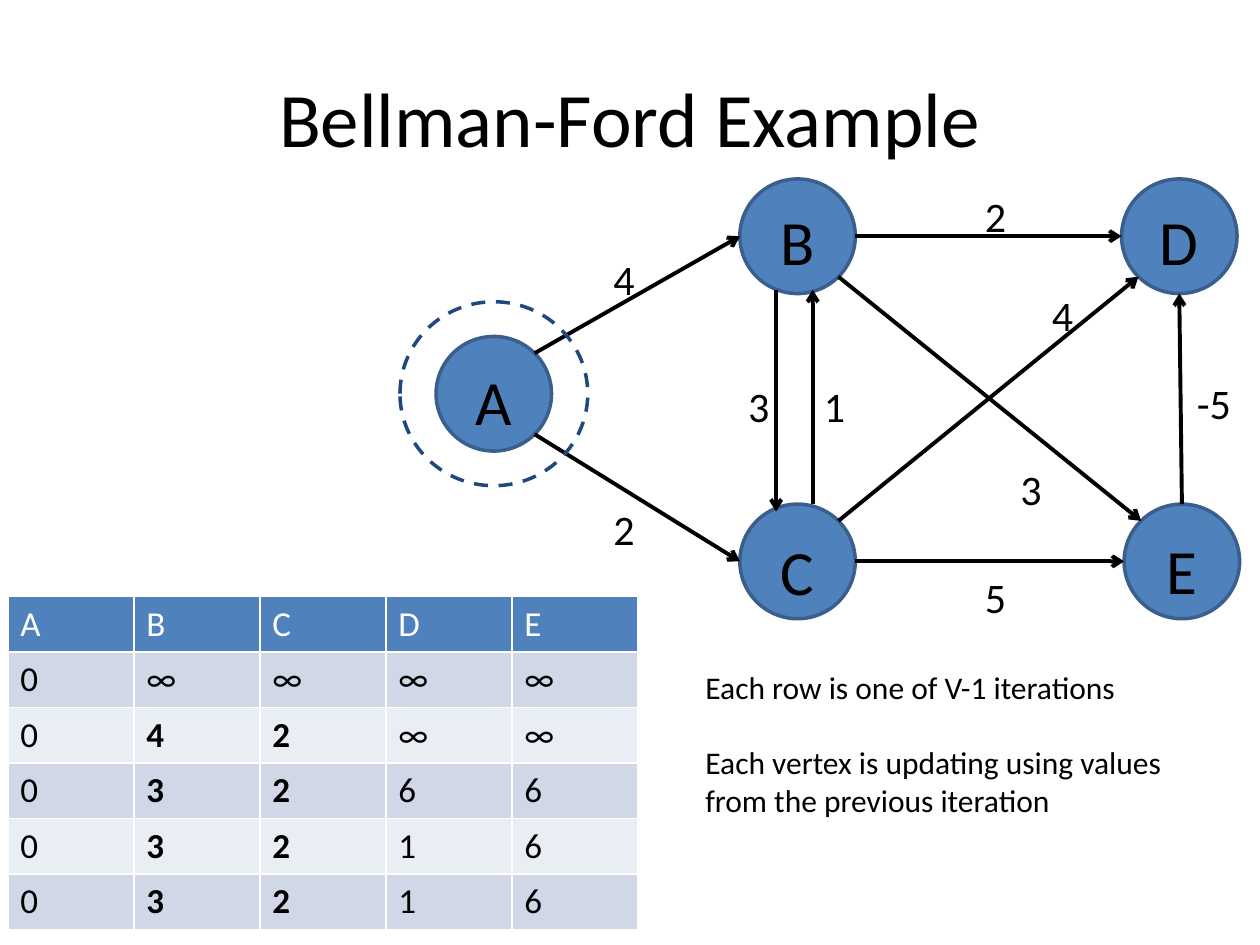
"""Build the Bellman-Ford example slide."""
import dataclasses

import lxml.etree
import pptx
import pptx.dml.color
import pptx.enum.dml
import pptx.enum.shapes
import pptx.enum.text
import pptx.oxml.ns
import pptx.util


@dataclasses.dataclass(frozen=True)
class Theme:
    """Colours, font and type sizes of the slide."""
    font: str = "Calibri"
    ink: str = "000000"
    paper: str = "FFFFFF"
    blue: str = "4F81BD"
    edge: str = "3A5F8C"
    navy: str = "1F497D"
    bands: tuple = ("E9EDF4", "D0D8E8")
    title: int = 44
    node: int = 36
    label: int = 24
    cell: int = 20
    note: int = 18


THEME = Theme()
WIDE, HIGH = 66, 65.5
DIAG = 0.5 ** 0.5
NODES = {
    "A": (282.2, 225, 203.8),
    "B": (455.8, 135, 112.3),
    "C": (455.8, 320.8, 301),
    "D": (673.9, 135, 112.3),
    "E": (675.4, 320.8, 300.2),
}
SITES = {
    "n": (0, -1), "s": (0, 1), "w": (-1, 0), "e": (1, 0),
    "ne": (DIAG, -DIAG), "nw": (-DIAG, -DIAG),
    "se": (DIAG, DIAG), "sw": (-DIAG, DIAG),
}
EDGES = [
    ("A", "ne", "B", "w"),
    ("A", "se", "C", "w"),
    ("B", "e", "D", "w"),
    ("B", "se", "E", "nw"),
    ("E", "n", "D", "s"),
    ("C", "e", "E", "w"),
    ("C", "ne", "D", "sw"),
]
PAIR = [(443.5, 165.6, 443.5, 292.3), (464.4, 288, 464.4, 165.6)]
LABELS = [
    ("4", 343.4, 141.1, 20),
    ("2", 343.4, 284.4, 20),
    ("3", 420.5, 213.8, 20),
    ("1", 463.7, 213.8, 20),
    ("2", 555.8, 105.1, 20),
    ("3", 576, 261.4, 38),
    ("-5", 676.8, 212.4, 43),
    ("5", 555.8, 323.3, 20),
    ("4", 594, 162, 20),
]
ROWS = ["ABCDE", "0∞∞∞∞", "042∞∞", "03266", "03216", "03216"]
NOTES = [
    "Each row is one of V-1 iterations",
    "Each vertex is updating using values from the previous iteration",
]


def pts(*vals):
    """Turn numbers into point lengths."""
    return [pptx.util.Pt(val) for val in vals]


def tint(code):
    """Turn a hex code into a colour."""
    return pptx.dml.color.RGBColor.from_string(code)


def apply(item, form):
    """Set each attribute of an item from a dict."""
    for key, val in form.items():
        setattr(item, key, val)


def write(para, text, size, color=THEME.ink, bold=False, **form):
    """Write one styled run into a paragraph."""
    apply(para, form)
    run = para.add_run()
    run.text = text
    apply(run.font, {"name": THEME.font, "size": pptx.util.Pt(size), "bold": bold})
    run.font.color.rgb = tint(color)


def add_text(slide, area, lines, size, gap=0, **form):
    """Add a wrapped text box with one paragraph per line."""
    frame = slide.shapes.add_textbox(*pts(*area)).text_frame
    frame.word_wrap = True
    for row, line in enumerate(lines):
        para = frame.add_paragraph() if row else frame.paragraphs[0]
        before = pptx.util.Pt(gap if row else 0)
        write(para, line, size, space_before=before, **form)


def add_oval(slide, mid, size, edge, fill=None, dash=None):
    """Add an ellipse around a middle point."""
    kind = pptx.enum.shapes.MSO_SHAPE.OVAL
    left, top = (spot - side / 2 for spot, side in zip(mid, size))
    oval = slide.shapes.add_shape(kind, *pts(left, top, *size))
    oval.shadow.inherit = False
    if fill:
        oval.fill.solid()
        oval.fill.fore_color.rgb = tint(fill)
    else:
        oval.fill.background()
    oval.line.color.rgb = tint(edge)
    apply(oval.line, {"width": pptx.util.Pt(2), "dash_style": dash})


def add_node(slide, name):
    """Add a graph vertex with its letter."""
    x, y, top = NODES[name]
    add_oval(slide, (x, y), (WIDE, HIGH), THEME.edge, THEME.blue)
    add_text(slide, (x - 21.6, top, 43.2, 42.5), [name], THEME.node,
             alignment=pptx.enum.text.PP_ALIGN.CENTER)


def port(name, site):
    """Find a point on the rim of a vertex."""
    x, y, _ = NODES[name]
    dx, dy = SITES[site]
    return x + dx * WIDE / 2, y + dy * HIGH / 2


def add_arrow(slide, ends):
    """Add a straight arrow between two points."""
    kind = pptx.enum.shapes.MSO_CONNECTOR.STRAIGHT
    link = slide.shapes.add_connector(kind, *pts(*ends))
    link.line.color.rgb = tint(THEME.ink)
    link.line.width = pptx.util.Pt(2.25)
    qn = pptx.oxml.ns.qn
    props = link._element.spPr
    lxml.etree.SubElement(props.find(qn("a:ln")), qn("a:tailEnd"), type="arrow")
    lxml.etree.SubElement(props, qn("a:effectLst"))


def add_grid(slide):
    """Add the table of distances per iteration."""
    area = pts(4.5, 340.9, 360, 31.6 * len(ROWS))
    grid = slide.shapes.add_table(len(ROWS), len(ROWS[0]), *area).table
    for r, row in enumerate(ROWS):
        for c, text in enumerate(row):
            cell = grid.cell(r, c)
            cell.fill.solid()
            cell.fill.fore_color.rgb = tint(THEME.bands[r % 2] if r else THEME.blue)
            write(cell.text_frame.paragraphs[0], text, THEME.cell,
                  THEME.ink if r else THEME.paper, bold=r > 1 and c in (1, 2))


def add_title(slide, text):
    """Place and fill the title."""
    title = slide.shapes.title
    area = pts(36, 21.6, 648, 90)
    apply(title, dict(zip(("left", "top", "width", "height"), area)))
    title.text_frame.vertical_anchor = pptx.enum.text.MSO_ANCHOR.MIDDLE
    write(title.text_frame.paragraphs[0], text, THEME.title,
          alignment=pptx.enum.text.PP_ALIGN.CENTER)


def main():
    """Build and save the slide."""
    deck = pptx.Presentation()
    apply(deck, dict(zip(("slide_width", "slide_height"), pts(720, 540))))
    slide = deck.slides.add_slide(deck.slide_layouts[5])
    add_title(slide, "Bellman-Ford Example")
    add_grid(slide)
    for name in NODES:
        add_node(slide, name)
    for tail, out, head, into in EDGES:
        add_arrow(slide, port(tail, out) + port(head, into))
    for ends in PAIR:
        add_arrow(slide, ends)
    for text, left, top, width in LABELS:
        add_text(slide, (left, top, width, 30), [text], THEME.label)
    add_oval(slide, NODES["A"][:2], (107.3, 105.1), THEME.navy,
             dash=pptx.enum.dml.MSO_LINE.DASH)
    add_text(slide, (396, 378, 302.4, 94.3), NOTES, THEME.note, gap=21.6)
    deck.save("out.pptx")


if __name__ == "__main__":
    main()
